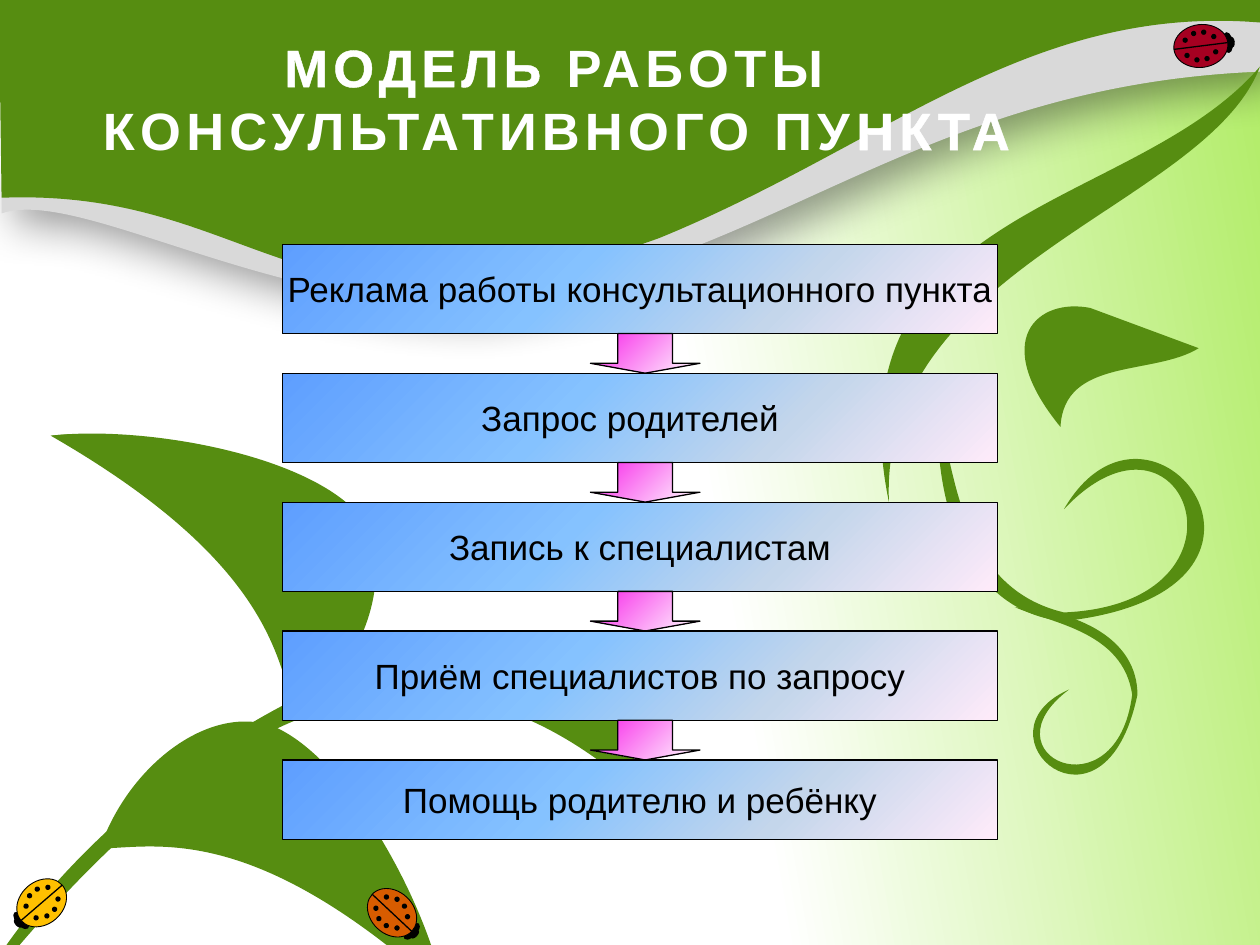
from copy import deepcopy
from math import cos, radians, sin

from lxml.etree import SubElement
from pptx import Presentation
from pptx.dml.color import RGBColor
from pptx.enum.shapes import MSO_CONNECTOR, MSO_SHAPE as SHAPE
from pptx.enum.text import MSO_ANCHOR, PP_ALIGN
from pptx.oxml import parse_xml
from pptx.oxml.ns import nsdecls, qn
from pptx.util import Pt

WHITE = RGBColor(0xFF, 0xFF, 0xFF)
BLACK = RGBColor(0, 0, 0)
GRAY = RGBColor(0xD9, 0xD9, 0xD9)
GREEN = RGBColor(0x56, 0x8D, 0x11)
LIME = RGBColor(0xB3, 0xED, 0x6A)
ORANGE = RGBColor(0xD8, 0x5C, 0x00)
YELLOW = RGBColor(0xFF, 0xC0, 0x00)
RED = RGBColor(0xA5, 0x00, 0x21)
STEP_STOPS = [(0, RGBColor(0x5E, 0x9E, 0xFF)), (0.4, RGBColor(0x85, 0xC2, 0xFF)),
              (0.7, RGBColor(0xC4, 0xD6, 0xEB)), (1, RGBColor(0xFF, 0xEB, 0xFA))]
ARROW_STOPS = [(0, RGBColor(0xF7, 0x1F, 0xE8)), (1, WHITE)]

# Each outline: frame (left, top, width, height), rotation, then points as they
# lie on the slide: 2 numbers are a straight corner, 6 a Bezier curve
GRAY_WAVE = ((0.7, -2, 720, 175.7), 0, [
    (1, 122), (1, 92), (721, -2), (720, 41),
    (520, 49, 436, 156, 270, 174), (153, 176, 44, 107, 1, 122)])
GREEN_WAVE = ((199.4, -298.1, 297.4, 700.6), 105.1, [
    (721.4, 13), (722.9, -0.7), (602.6, -2.9, 119.5, -18.7, -0.7, 0), (0.9, 113),
    (151.2, 107.3, 170.6, 210.2, 376.6, 136.1), (505.4, 83.5, 588.2, 1.4, 721.4, 13)])
PLANT = [
    # vine, petal and two curls on the right
    ((503.3, 38.2, 216.7, 249.1), 0, [
        (720, 38), (649, 121, 473, 117, 508, 287), (502, 151, 690, 118, 720, 38)]),
    ((585.4, 175.7, 100.1, 68.4), 0, [
        (606, 244), (608, 204, 659, 215, 685, 199), (623, 176),
        (593, 170, 565, 194, 606, 244)]),
    ((535.7, 235.4, 152.6, 119.5), 0, [
        (536, 235), (546, 271, 549, 336, 608, 350), (724, 345, 677, 218, 608, 291),
        (658, 205, 760, 338, 608, 355), (555, 350, 534, 293, 536, 235)]),
    ((566.6, 358.6, 92.2, 74.9), 275.2, [
        (580, 347), (601, 356, 642, 361, 647, 397), (638, 467, 561, 431, 611, 394),
        (554, 419, 631, 488, 650, 397), (650, 365, 616, 349, 580, 347)]),
    # upper leaf and its shade
    ((14.4, 255.6, 200.2, 141.8), 12.2, [
        (169, 410), (159, 378, 156, 322, 29, 249), (81, 243, 174, 259, 205, 294),
        (228, 326, 208, 382, 169, 410)]),
    ((14.4, 259.9, 187.2, 136.1), 12.2, [
        (169, 410), (214, 345, 168, 263, 29, 249), (81, 243, 141, 270, 172, 305),
        (194, 338, 208, 382, 169, 410)]),
    # lower leaf and its shade
    ((54, 439.2, 200.2, 141.8), 59.8, [
        (57, 485), (91, 484, 146, 470, 254, 568), (244, 516, 199, 433, 156, 415),
        (119, 402, 73, 438, 57, 485)]),
    ((61.2, 449.3, 187.2, 136.1), 59.8, [
        (57, 485), (106, 422, 198, 440, 254, 568), (244, 516, 199, 468, 156, 449),
        (119, 438, 73, 438, 57, 485)]),
    # stem
    ((-7.9, 392.4, 386.6, 223.9), 133.2, [
        (377, 464), (278, 369, 158, 350, -19, 577), (30, 483, 138, 402, 225, 377),
        (298, 363, 379, 374, 377, 464)]),
]
SPOTS = [(4.4, -8), (7.6, -2.6), (7.6, 3.2), (4.4, 8.5)]
STEPS = ["Реклама работы консультационного пункта", "Запрос родителей",
         "Запись к специалистам", "Приём специалистов по запросу",
         "Помощь родителю и ребёнку"]


def set_gradient(fill, stops, angle):
    fill.gradient()
    first = fill.gradient_stops[0]._gs
    for _ in stops[2:]:
        first.addnext(deepcopy(first))
    for stop, (position, color) in zip(fill.gradient_stops, stops):
        stop.color.rgb = color
        stop.position = position
    fill.gradient_angle = angle


def add_text(p, text, size=20, color=BLACK, bold=False, spacing=0, outline=0):
    p.alignment = PP_ALIGN.CENTER
    r = p.add_run()
    r.text = text
    r.font.name, r.font.size, r.font.bold = "Arial", Pt(size), bold
    r.font.color.rgb = color
    rPr = r._r.get_or_add_rPr()
    if spacing:
        rPr.set("spc", str(spacing * 100))
    if outline:
        rPr.insert(0, parse_xml(
            f'<a:ln {nsdecls("a")} w="{Pt(outline)}"><a:solidFill>'
            f'<a:srgbClr val="{color}"/></a:solidFill></a:ln>'))


def add_shape(parent, kind, left, top, width, height, color=None, line=0):
    sp = parent.shapes.add_shape(kind, Pt(left), Pt(top), Pt(width), Pt(height))
    sp.shadow.inherit = False
    if color is not None:
        sp.fill.solid()
        sp.fill.fore_color.rgb = color
    if line:
        sp.line.color.rgb, sp.line.width = BLACK, Pt(line)
    else:
        sp.line.fill.background()
    return sp


def turn_point(x, y, angle):
    a = radians(angle)
    return x * cos(a) - y * sin(a), x * sin(a) + y * cos(a)


def add_outline(slide, left, top, outline, color):
    (x, y, width, height), angle, segments = outline
    builder = slide.shapes.build_freeform(0, 0)
    builder.add_line_segments([(Pt(width), 0), (Pt(width), Pt(height))])
    sp = builder.convert_to_shape()
    sp.left, sp.top, sp.width, sp.height = map(Pt, (left + x, top + y, width, height))
    sp.rotation = angle
    sp.shadow.inherit = False
    sp.fill.solid()
    sp.fill.fore_color.rgb = color
    sp.line.fill.background()

    # Curves, with the points turned back into the unrotated frame
    curve = next(sp._element.iter(qn("a:path")))
    for child in list(curve):
        curve.remove(child)
    curve.set("w", str(Pt(width)))
    curve.set("h", str(Pt(height)))
    for i, seg in enumerate(segments):
        tag = "a:moveTo" if i == 0 else "a:lnTo" if len(seg) == 2 else "a:cubicBezTo"
        step = SubElement(curve, qn(tag))
        for px, py in zip(seg[::2], seg[1::2]):
            dx, dy = turn_point(px - x - width / 2, py - y - height / 2, -angle)
            SubElement(step, qn("a:pt"), x=str(Pt(dx + width / 2)),
                       y=str(Pt(dy + height / 2)))
    SubElement(curve, qn("a:close"))
    return sp


def add_backdrop(slide, left, top):
    set_gradient(slide.background.fill, [(0.55, WHITE), (0.99, LIME)], 10)
    wave = add_outline(slide, left, top, GRAY_WAVE, GRAY)
    wave._element.spPr.find(qn("a:effectLst")).append(parse_xml(
        f'<a:outerShdw {nsdecls("a")} blurRad="{Pt(25)}" dist="{Pt(12)}" '
        'dir="2700000" algn="tl" rotWithShape="0"><a:srgbClr val="000000">'
        '<a:alpha val="40000"/></a:srgbClr></a:outerShdw>'))
    for outline in [GREEN_WAVE] + PLANT:
        add_outline(slide, left, top, outline, GREEN)


def add_ladybug(slide, cx, cy, angle, color):
    group = slide.shapes.add_group_shape()

    def place(x, y):
        dx, dy = turn_point(x, y, angle)
        return cx + dx, cy + dy

    def add_oval(x, y, width, height, fill=BLACK, line=0):
        px, py = place(x, y)
        add_shape(group, SHAPE.OVAL, px - width / 2, py - height / 2,
                  width, height, fill, line).rotation = angle

    add_oval(0, -15.4, 12, 6)                  # head
    add_oval(0, 0, 24.5, 31, color, 0.5)       # body
    ends = [Pt(v) for v in place(0, -15.4) + place(0, 15.4)]
    seam = group.shapes.add_connector(MSO_CONNECTOR.STRAIGHT, *ends)
    seam.line.color.rgb, seam.line.width = BLACK, Pt(0.75)
    SubElement(seam._element.spPr, qn("a:effectLst"))
    add_oval(0, -18, 6, 3)                     # nose
    for x, y in SPOTS:
        add_oval(x, y, 3, 3)
        add_oval(-x, y, 3, 3)


def add_title(slide, left, top, width, height):
    title = slide.shapes.title
    title.left, title.top, title.width, title.height = map(Pt, (left, top, width, height))
    slide.shapes._spTree.append(title._element)   # in front of the backdrop
    tf = title.text_frame
    tf.word_wrap = True
    tf.vertical_anchor = MSO_ANCHOR.MIDDLE
    for text, outline in [("МОДЕЛЬ ", 1.45), ("РАБОТЫ КОНСУЛЬТАТИВНОГО ПУ", 0),
                          ("НКТА", 1.45)]:
        add_text(tf.paragraphs[0], text, size=30, color=WHITE, bold=True,
                 spacing=3, outline=outline)


def add_flow(slide, left, top, width, height, box_height=51, last_height=45.3):
    pitch = (height - last_height) / (len(STEPS) - 1)
    for i, text in enumerate(STEPS):
        y = top + i * pitch
        is_last = i == len(STEPS) - 1
        sp = add_shape(slide, SHAPE.FLOWCHART_PROCESS, left, y, width,
                       last_height if is_last else box_height, line=0.75)
        set_gradient(sp.fill, STEP_STOPS, 315)
        tf = sp.text_frame
        tf.word_wrap = False
        tf.vertical_anchor = MSO_ANCHOR.MIDDLE
        if i == 1:
            tf.margin_right = Pt(18.4)   # this label sits a little to the left
        add_text(tf.paragraphs[0], text)
        if not is_last:
            arrow = add_shape(slide, SHAPE.DOWN_ARROW, left + 176, y + box_height,
                              62.6, pitch - box_height, line=0.75)
            arrow.adjustments[0], arrow.adjustments[1] = 0.5, 0.25
            set_gradient(arrow.fill, ARROW_STOPS, 315)


def main():
    prs = Presentation()
    prs.slide_width, prs.slide_height = Pt(720), Pt(540)
    slide = prs.slides.add_slide(prs.slide_layouts[5])
    add_backdrop(slide, 0, 0)
    add_ladybug(slide, 224, 521.6, 133.1, ORANGE)
    add_ladybug(slide, 23.8, 515.9, 229.3, YELLOW)
    add_ladybug(slide, 686.2, 26.3, 82.8, RED)
    add_title(slide, 34, 0, 568, 111.6)
    add_flow(slide, 161.4, 139.6, 408.6, 340)
    prs.save("out.pptx")


if __name__ == "__main__":
    main()
